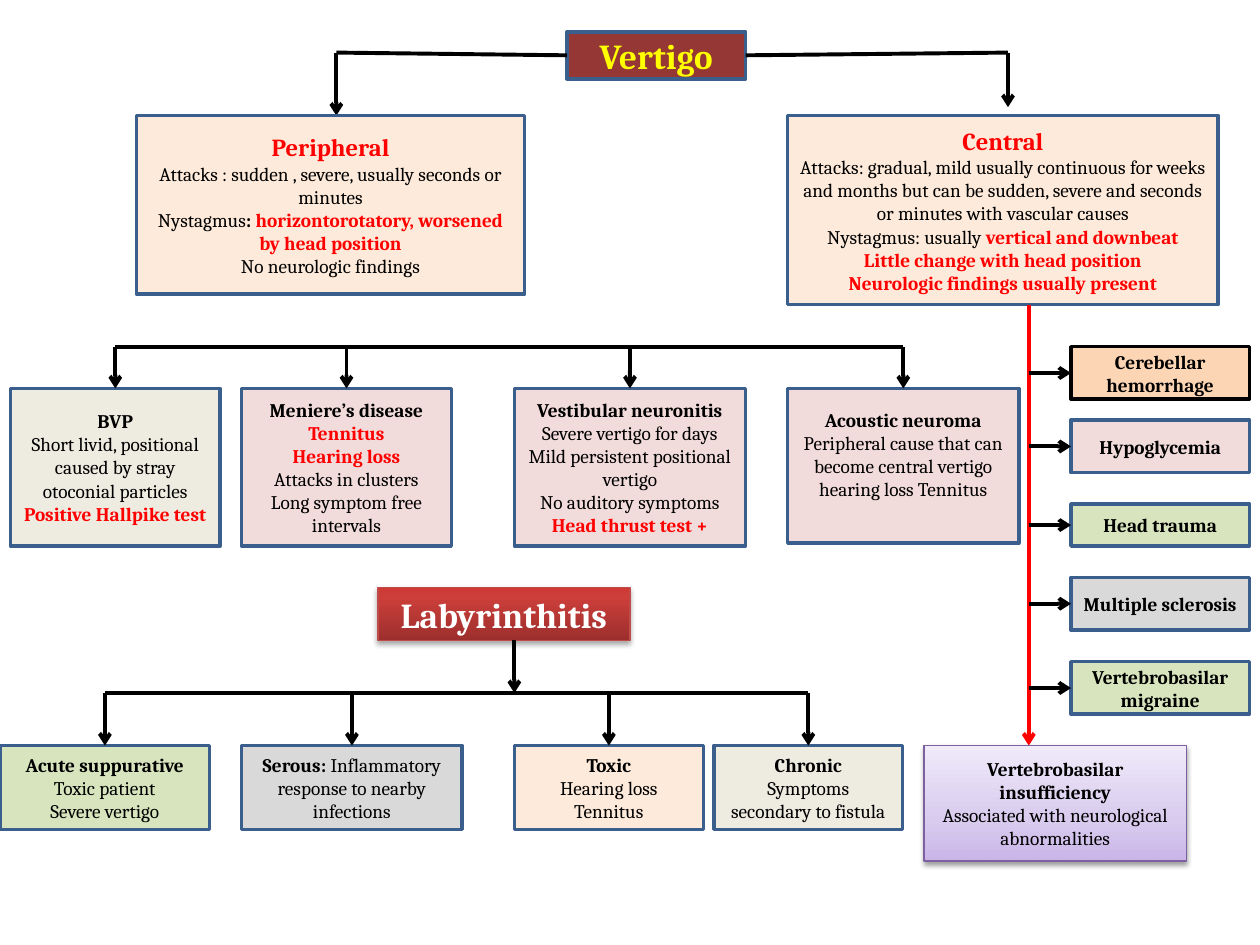
from dataclasses import dataclass

from lxml import etree
from pptx import Presentation
from pptx.dml.color import RGBColor
from pptx.enum.shapes import MSO_CONNECTOR, MSO_SHAPE
from pptx.enum.text import MSO_ANCHOR, MSO_AUTO_SIZE, PP_ALIGN
from pptx.oxml.ns import qn
from pptx.util import Cm, Pt

STRAIGHT = MSO_CONNECTOR.STRAIGHT
RECTANGLE = MSO_SHAPE.RECTANGLE
MIDDLE = MSO_ANCHOR.MIDDLE
CENTER = PP_ALIGN.CENTER
FIXED_SIZE = MSO_AUTO_SIZE.NONE
TOP, LEFT, BOTTOM, RIGHT = range(4)


@dataclass(frozen=True)
class Theme:
    font: str = "Cambria"
    heading_size: int = 20
    type_size: int = 14
    text_size: int = 11
    black: str = "000000"
    red: str = "FF0000"
    white: str = "FFFFFF"
    yellow: str = "FFFF00"
    outline: str = "3A5F8C"
    maroon: str = "953735"
    cream: str = "FDEADA"
    ivory: str = "EEECE1"
    rose: str = "F2DCDB"
    green: str = "D7E4BD"
    grey: str = "D9D9D9"
    orange: str = "FCD5B5"
    purple_line: str = "7D60A0"
    brick_line: str = "BF4C48"
    purple_fade: tuple = ((0, "C9B5E8"), (35, "D8CBEE"), (100, "F0EAF9"))
    brick_fade: tuple = ((0, "9C2F2D"), (80, "CB3E3A"), (100, "CE3B37"))


THEME = Theme()


def body(text):
    return text, THEME.black, False, THEME.text_size


def strong(text):
    return text, THEME.black, True, THEME.text_size


def alert(text, size=THEME.text_size):
    return text, THEME.red, True, size


def heading(text, color):
    return text, color, True, THEME.heading_size


def style_font(font, color, bold):
    font.color.rgb = RGBColor.from_string(color)
    font.bold = bold


def write_text(frame, paragraphs):
    frame.word_wrap = True
    frame.auto_size = FIXED_SIZE
    frame.vertical_anchor = MIDDLE
    for index, content in enumerate(paragraphs):
        paragraph = frame.add_paragraph() if index else frame.paragraphs[0]
        paragraph.alignment = CENTER
        pieces = content if isinstance(content, list) else [content]
        paragraph.font.name = THEME.font
        paragraph.font.size = Pt(pieces[0][3])
        if len(pieces) == 1:
            style_font(paragraph.font, *pieces[0][1:3])
        for text, color, bold, _ in pieces:
            run = paragraph.add_run()
            run.text = text
            if len(pieces) > 1:
                style_font(run.font, color, bold)


def dress(panel, fill, outline, width=2):
    panel.fill.solid()
    panel.fill.fore_color.rgb = RGBColor.from_string(fill)
    panel.line.color.rgb = RGBColor.from_string(outline)
    panel.line.width = Pt(width)


def add_box(slide, left, top, width, height, fill, paragraphs, outline=THEME.outline, line_width=2):
    box = slide.shapes.add_shape(RECTANGLE, Cm(left), Cm(top), Cm(width), Cm(height))
    box.shadow.inherit = False
    dress(box, fill, outline, line_width)
    write_text(box.text_frame, paragraphs)
    return box


def add_raised_box(slide, left, top, width, height, fade, outline, opacity, paragraphs):
    box = add_box(slide, left, top, width, height, fade[0][1], paragraphs, outline, 0.75)
    properties = box.element.spPr
    solid = properties.find(qn("a:solidFill"))
    gradient = etree.Element(qn("a:gradFill"), rotWithShape="1")
    stops = etree.SubElement(gradient, qn("a:gsLst"))
    for position, color in fade:
        stop = etree.SubElement(stops, qn("a:gs"), pos=str(position * 1000))
        etree.SubElement(stop, qn("a:srgbClr"), val=color)
    etree.SubElement(gradient, qn("a:lin"), ang="16200000", scaled="0")
    properties.replace(solid, gradient)
    shadow = etree.SubElement(properties.find(qn("a:effectLst")), qn("a:outerShdw"),
                              blurRad=str(Pt(3.1)), dist=str(Pt(1.7)), dir="5400000", rotWithShape="0")
    shade = etree.SubElement(shadow, qn("a:srgbClr"), val=THEME.black)
    etree.SubElement(shade, qn("a:alpha"), val=str(opacity * 1000))


def add_line(slide, x1, y1, x2, y2, arrow=True, color=THEME.black):
    line = slide.shapes.add_connector(STRAIGHT, Cm(x1), Cm(y1), Cm(x2), Cm(y2))
    line.line.color.rgb = RGBColor.from_string(color)
    line.line.width = Pt(2.25)
    if arrow:
        etree.SubElement(line.line._get_or_add_ln(), qn("a:tailEnd"), type="arrow")
    etree.SubElement(line.element.spPr, qn("a:effectLst"))
    return line


def add_branches(slide, trunk_y, top, children):
    centers = []
    for left, width, height, fill, paragraphs in children:
        box = add_box(slide, left, top, width, height, fill, paragraphs)
        center = left + width / 2
        add_line(slide, center, trunk_y, center, top).end_connect(box, TOP)
        centers.append(center)
    add_line(slide, centers[0], trunk_y, centers[-1], trunk_y, arrow=False)
    return box


def add_title(slide):
    title = slide.shapes.title
    title.left, title.top, title.width, title.height = Cm(11.43), Cm(0.64), Cm(3.6), Cm(0.95)
    dress(title, THEME.maroon, THEME.outline)
    write_text(title.text_frame, [heading("Vertigo", THEME.yellow)])
    for end_x, side, arrow_y in ((6.78, LEFT, 2.33), (20.32, RIGHT, 2.16)):
        add_line(slide, 13.23, 1.12, end_x, 1.06, arrow=False).begin_connect(title, side)
        add_line(slide, end_x, 1.06, end_x, arrow_y)


def add_vertigo_types(slide):
    add_box(slide, 2.75, 2.33, 7.83, 3.6, THEME.cream, [
        alert("Peripheral", THEME.type_size),
        body("Attacks : sudden , severe, usually seconds or minutes"),
        [body("Nystagmus"), strong(": "), alert("horizontorotatory, worsened by head position")],
        body("No neurologic findings")])
    add_box(slide, 15.88, 2.33, 8.68, 3.81, THEME.cream, [
        alert("Central", THEME.type_size),
        body("Attacks: gradual, mild usually continuous for weeks and months but can be "
             "sudden, severe and seconds or minutes with vascular causes"),
        [body("Nystagmus: usually "), alert("vertical and downbeat")],
        alert("Little change with head position"),
        alert("Neurologic findings usually present")])


def add_peripheral_causes(slide):
    neuroma = add_branches(slide, 6.99, 7.83, [
        (0.21, 4.23, 3.18, THEME.ivory, [
            strong("BVP"),
            body("Short livid, positional caused by stray otoconial particles"),
            alert("Positive Hallpike test")]),
        (4.87, 4.23, 3.18, THEME.rose, [
            strong("Meniere’s disease"), alert("Tennitus"), alert("Hearing loss"),
            body("Attacks in clusters"), body("Long symptom free intervals")]),
        (10.37, 4.66, 3.18, THEME.rose, [
            strong("Vestibular neuronitis"), body("Severe vertigo for days"),
            body("Mild persistent positional vertigo"), body("No auditory symptoms"),
            alert("Head thrust test +")]),
        (15.88, 4.66, 3.12, THEME.rose, [
            strong("Acoustic neuroma"),
            body("Peripheral cause that can become central vertigo hearing loss Tennitus")])])
    neuroma.text_frame.margin_bottom = Cm(0.6)


def add_central_causes(slide):
    spine_x, cause_left = 20.74, 21.59
    add_line(slide, spine_x, 6.14, spine_x, 15.03, color=THEME.red)
    for top, height, fill, outline, cause in (
            (6.99, 1.06, THEME.orange, THEME.black, "Cerebellar hemorrhage"),
            (8.47, 1.06, THEME.rose, THEME.outline, "Hypoglycemia"),
            (10.16, 0.85, THEME.green, THEME.outline, "Head trauma"),
            (11.64, 1.06, THEME.grey, THEME.outline, "Multiple sclerosis"),
            (13.34, 1.06, THEME.green, THEME.outline, "Vertebrobasilar migraine")):
        box = add_box(slide, cause_left, top, 3.6, height, fill, [strong(cause)], outline)
        middle = top + height / 2
        add_line(slide, spine_x, middle, cause_left, middle).end_connect(box, LEFT)
    add_raised_box(slide, 18.63, 15.03, 5.29, 2.33, THEME.purple_fade, THEME.purple_line, 38, [
        strong("Vertebrobasilar insufficiency"),
        body("Associated with neurological abnormalities")])


def add_labyrinthitis(slide):
    add_raised_box(slide, 7.62, 11.85, 5.08, 1.06, THEME.brick_fade, THEME.brick_line, 35,
                   [heading("Labyrinthitis", THEME.white)])
    add_line(slide, 10.37, 12.91, 10.37, 13.97)
    add_branches(slide, 13.97, 15.03, [
        (0, 4.23, 1.69, THEME.green, [
            strong("Acute suppurative"), body("Toxic patient"), body("Severe vertigo")]),
        (4.87, 4.45, 1.69, THEME.grey, [
            [strong("Serous: "), body("Inflammatory response to nearby infections")]]),
        (10.37, 3.81, 1.69, THEME.cream, [
            strong("Toxic"), body("Hearing loss"), body("Tennitus")]),
        (14.39, 3.81, 1.69, THEME.ivory, [
            strong("Chronic"), body("Symptoms secondary to fistula")])])


def main():
    deck = Presentation()
    deck.slide_width, deck.slide_height = Cm(25.4), Cm(19.05)
    slide = deck.slides.add_slide(deck.slide_layouts[5])
    add_title(slide)
    add_vertigo_types(slide)
    add_peripheral_causes(slide)
    add_central_causes(slide)
    add_labyrinthitis(slide)
    deck.save("out.pptx")


if __name__ == "__main__":
    main()
